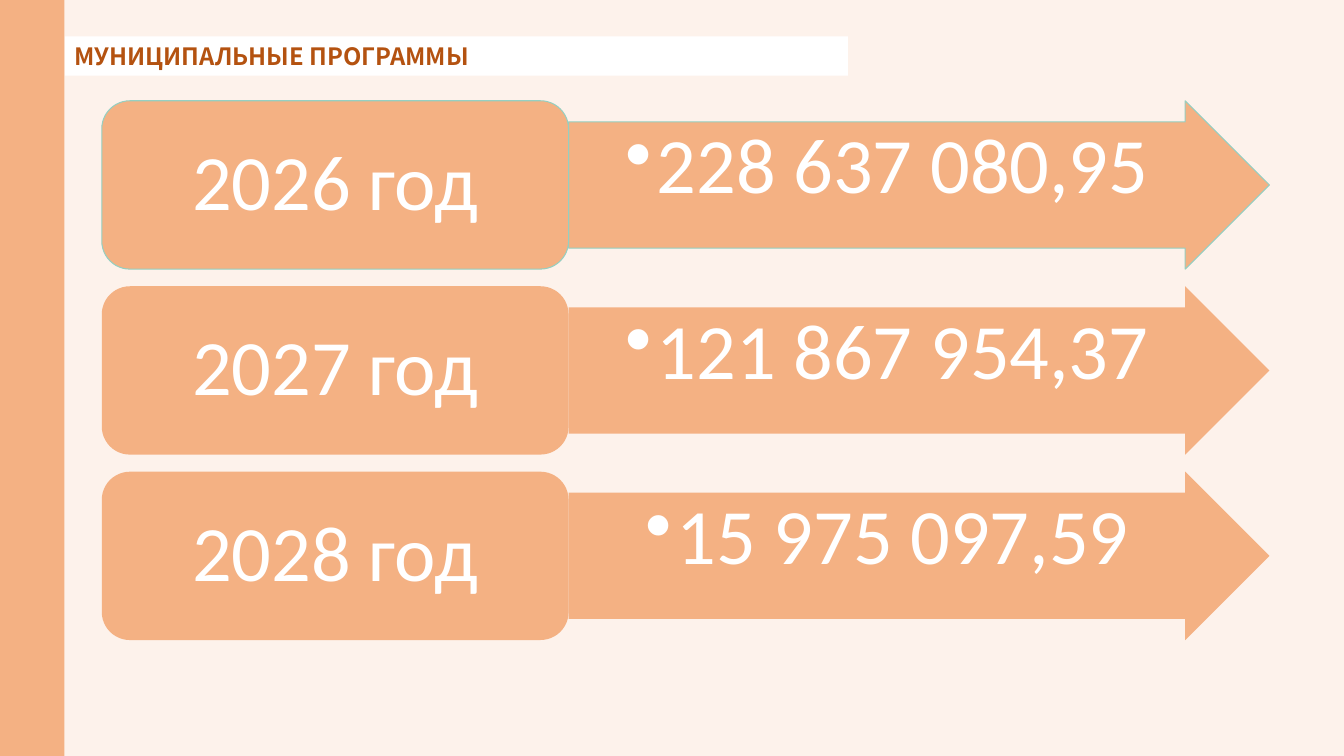
from pptx import Presentation
from pptx.dml.color import RGBColor
from pptx.enum.shapes import MSO_SHAPE
from pptx.enum.text import MSO_ANCHOR, PP_ALIGN
from pptx.oxml.ns import qn
from pptx.util import Inches, Pt
from lxml import etree

RECT = MSO_SHAPE.RECTANGLE
ROUNDED = MSO_SHAPE.ROUNDED_RECTANGLE
ARROW = MSO_SHAPE.RIGHT_ARROW
TOP, MIDDLE = MSO_ANCHOR.TOP, MSO_ANCHOR.MIDDLE
LEFT, CENTER = PP_ALIGN.LEFT, PP_ALIGN.CENTER

COLORS = {
    "background": "FDF2EB",
    "peach": "F4B183",
    "mint": "95CFC1",
    "white": "FFFFFF",
    "rust": "B45210",
}
BUDGETS = [
    ("2026 год", "228 637 080,95", "mint"),
    ("2027 год", "121 867 954,37", None),
    ("2028 год", "15 975 097,59", None),
]
FIRST_TOP, ROW_STEP, ROW_HEIGHT = 1, 1.84, 1.67
YEAR_LEFT, YEAR_WIDTH, AMOUNT_WIDTH = 1.01, 4.63, 6.95


def rgb(name):
    return RGBColor.from_string(COLORS[name])


def add_block(slide, preset, left, top, width, height, fill, outline=None):
    block = slide.shapes.add_shape(
        preset, Inches(left), Inches(top), Inches(width), Inches(height))
    block.shadow.inherit = False
    block.fill.solid()
    block.fill.fore_color.rgb = rgb(fill)
    if outline:
        block.line.color.rgb = rgb(outline)
        block.line.width = Pt(0.75)
    else:
        block.line.fill.background()
    return block


def add_bullet(paragraph, indent):
    properties = paragraph._p.get_or_add_pPr()
    properties.set("marL", str(Inches(indent)))
    properties.set("indent", str(-Inches(indent)))
    etree.SubElement(properties, qn("a:buChar")).set("char", "•")


def write(block, wording, size, font, color, align, anchor, insets,
          bold=False, bullet=False):
    frame = block.text_frame
    frame.word_wrap = True
    frame.vertical_anchor = anchor
    frame.margin_left = frame.margin_right = Inches(insets[0])
    frame.margin_top = frame.margin_bottom = Inches(insets[1])
    paragraph = frame.paragraphs[0]
    paragraph.alignment = align
    paragraph.line_spacing = 0.9
    if bullet:
        paragraph.level = 1
        add_bullet(paragraph, 0.31)
    run = paragraph.add_run()
    run.text = wording
    run.font.size = Pt(size)
    run.font.name = font
    run.font.bold = bold
    run.font.color.rgb = rgb(color)


def add_heading(slide):
    heading = add_block(slide, RECT, 0.64, 0.36, 7.77, 0.39, "white")
    write(heading, "МУНИЦИПАЛЬНЫЕ ПРОГРАММЫ", 17, "Noto Sans CJK JP", "rust",
          LEFT, MIDDLE, (0.1, 0.05), bold=True)
    heading.text_frame.paragraphs[0].line_spacing = 1.0


def add_budget(slide, top, year, amount, outline):
    arrow = add_block(slide, ARROW, YEAR_LEFT + YEAR_WIDTH, top,
                      AMOUNT_WIDTH, ROW_HEIGHT, "peach", outline)
    arrow.adjustments[0] = 0.75
    arrow.adjustments[1] = 0.5
    write(arrow, amount, 56, "Calibri", "white", CENTER, TOP, (0.04, 0.04),
          bullet=True)
    label = add_block(slide, ROUNDED, YEAR_LEFT, top,
                      YEAR_WIDTH, ROW_HEIGHT, "peach", outline)
    write(label, year, 56, "Calibri", "white", CENTER, MIDDLE, (0.23, 0.12))


def main():
    deck = Presentation()
    deck.slide_width, deck.slide_height = Inches(13.33), Inches(7.5)
    slide = deck.slides.add_slide(deck.slide_layouts[6])
    slide.background.fill.solid()
    slide.background.fill.fore_color.rgb = rgb("background")
    add_heading(slide)
    add_block(slide, RECT, 0, 0, 0.64, 7.5, "peach")
    for row, (year, amount, outline) in enumerate(BUDGETS):
        add_budget(slide, FIRST_TOP + row * ROW_STEP, year, amount, outline)
    deck.save("out.pptx")


if __name__ == "__main__":
    main()
